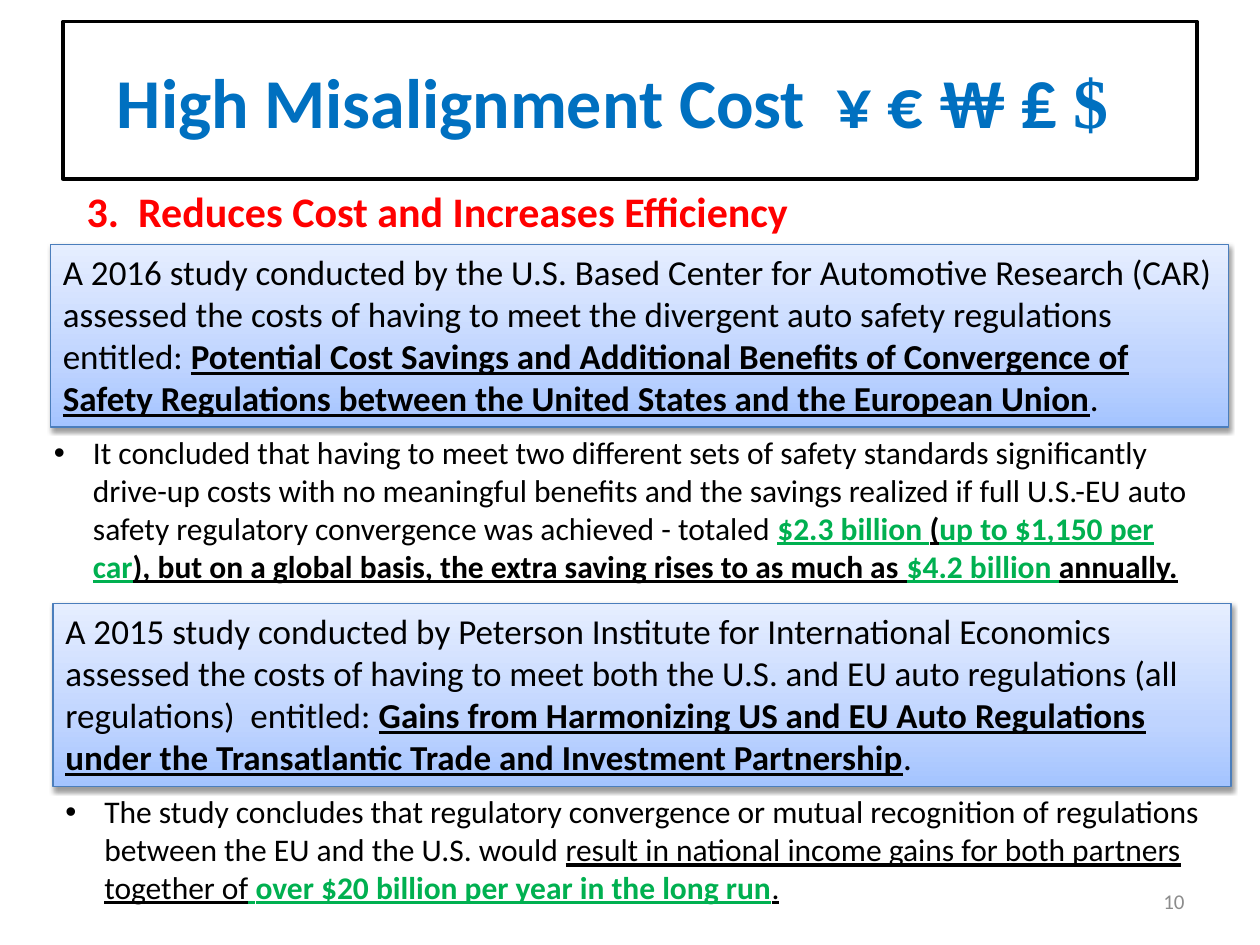
"""Build the slide on the cost of misaligned auto safety regulations."""
from lxml.etree import SubElement
from pptx import Presentation
from pptx.dml.color import RGBColor
from pptx.enum.shapes import MSO_SHAPE
from pptx.enum.text import MSO_ANCHOR, PP_ALIGN
from pptx.oxml import parse_xml
from pptx.oxml.ns import nsdecls, qn
from pptx.util import Inches, Pt

BLACK = RGBColor(0x00, 0x00, 0x00)
WHITE = RGBColor(0xFF, 0xFF, 0xFF)
BLUE = RGBColor(0x00, 0x70, 0xC0)
RED = RGBColor(0xFF, 0x00, 0x00)
GREEN = RGBColor(0x00, 0xB0, 0x50)
GREY = RGBColor(0x8C, 0x8C, 0x8C)
BORDER_BLUE = RGBColor(0x4B, 0x7E, 0xBC)

GRADIENT = f"""<a:gradFill {nsdecls('a')} rotWithShape="1"><a:gsLst>
<a:gs pos="0"><a:srgbClr val="A4C4FF"/></a:gs>
<a:gs pos="35000"><a:srgbClr val="BFD4FF"/></a:gs>
<a:gs pos="100000"><a:srgbClr val="E6EEFF"/></a:gs>
</a:gsLst><a:lin ang="16200000" scaled="1"/></a:gradFill>"""
SHADOW = f"""<a:outerShdw {nsdecls('a')} blurRad="40000" dist="20000" dir="5400000" rotWithShape="0">
<a:srgbClr val="000000"><a:alpha val="38000"/></a:srgbClr></a:outerShdw>"""


def write(holder, runs, size, align=PP_ALIGN.LEFT, anchor=MSO_ANCHOR.TOP):
    frame = holder.text_frame
    frame.word_wrap = True
    frame.vertical_anchor = anchor
    paragraph = frame.paragraphs[0]
    paragraph.alignment = align
    for text, color, bold, underline, *font in runs:
        run = paragraph.add_run()
        run.text = text
        run.font.name = font[0] if font else "Calibri"
        run.font.size = Pt(size)
        run.font.color.rgb = color
        run.font.bold = bold
        run.font.underline = underline
    return paragraph


def add_box(left, top, width, height, border, weight):
    box = slide.shapes.add_shape(
        MSO_SHAPE.RECTANGLE, Inches(left), Inches(top), Inches(width), Inches(height))
    box.shadow.inherit = False
    box.fill.solid()
    box.fill.fore_color.rgb = WHITE
    box.line.color.rgb = border
    box.line.width = Pt(weight)
    return box


prs = Presentation()
prs.slide_width, prs.slide_height = Inches(10), Inches(7.5)
slide = prs.slides.add_slide(prs.slide_layouts[6])

title = add_box(0.5, 0.17, 9, 1.25, BLACK, 2)
write(title, [
    ("High Misalignment Cost  ¥ € ₩ ₤ ", BLUE, True, False),
    ("$  ", BLUE, True, False, "Times New Roman"),
], 40, PP_ALIGN.CENTER, MSO_ANCHOR.MIDDLE)

page_number = slide.shapes.add_textbox(Inches(7.17), Inches(6.95), Inches(2.33), Inches(0.4))
write(page_number, [("10", GREY, False, False)], 12, PP_ALIGN.RIGHT, MSO_ANCHOR.MIDDLE)

heading = slide.shapes.add_textbox(Inches(0.59), Inches(1.42), Inches(6.13), Inches(0.5))
write(heading, [("3.  Reduces Cost and Increases Efficiency", RED, True, False)], 24)

studies = [
    (0.4, 1.94,
     "A 2016 study conducted by the U.S. Based Center for Automotive Research (CAR) assessed "
     "the costs of having to meet the divergent auto safety regulations entitled: ",
     "Potential Cost Savings and Additional Benefits of Convergence of Safety Regulations "
     "between the United States and the European Union"),
    (0.42, 4.79,
     "A 2015 study conducted by Peterson Institute for International Economics assessed the "
     "costs of having to meet both the U.S. and EU auto regulations (all regulations)  entitled: ",
     "Gains from Harmonizing US and EU Auto Regulations under the Transatlantic Trade and "
     "Investment Partnership"),
]
for left, top, introduction, report in studies:
    study = add_box(left, top, 9.35, 1.45, BORDER_BLUE, 0.75)
    properties = study.element.spPr
    properties.replace(properties.find(qn("a:solidFill")), parse_xml(GRADIENT))
    properties.find(qn("a:effectLst")).append(parse_xml(SHADOW))
    write(study, [
        (introduction, BLACK, False, False),
        (report, BLACK, True, True),
        (".", BLACK, False, False),
    ], 20)

conclusions = [
    (0.33, 3.39, 9.33, 1.31, [
        ("It concluded that having to meet two different sets of safety standards significantly "
         "drive-up costs with no meaningful benefits and the savings realized if full U.S.-EU "
         "auto safety regulatory convergence was achieved - totaled ", BLACK, False, False),
        ("$2.3 billion ", GREEN, True, True),
        ("(", BLACK, True, True),
        ("up to $1,150 per car", GREEN, True, True),
        ("), but on a global basis, the extra saving rises to as much as ", BLACK, True, True),
        ("$4.2 billion ", GREEN, True, True),
        ("annually.", BLACK, True, True),
    ]),
    (0.42, 6.24, 9.25, 1.01, [
        ("The study concludes that regulatory convergence or mutual recognition of regulations "
         "between the EU and the U.S. would ", BLACK, False, False),
        ("result in national income gains for both partners together of", BLACK, False, True),
        (" ", GREEN, False, True),
        ("over $20 billion per year in the long run", GREEN, True, True),
        (".", BLACK, False, True),
    ]),
]
for left, top, width, height, runs in conclusions:
    conclusion = slide.shapes.add_textbox(
        Inches(left), Inches(top), Inches(width), Inches(height))
    indents = write(conclusion, runs, 18)._p.get_or_add_pPr()
    indents.set("marL", str(Inches(0.31)))
    indents.set("indent", str(Inches(-0.31)))
    SubElement(indents, qn("a:buFont"), typeface="Arial")
    SubElement(indents, qn("a:buChar"), char="•")

prs.save("out.pptx")
